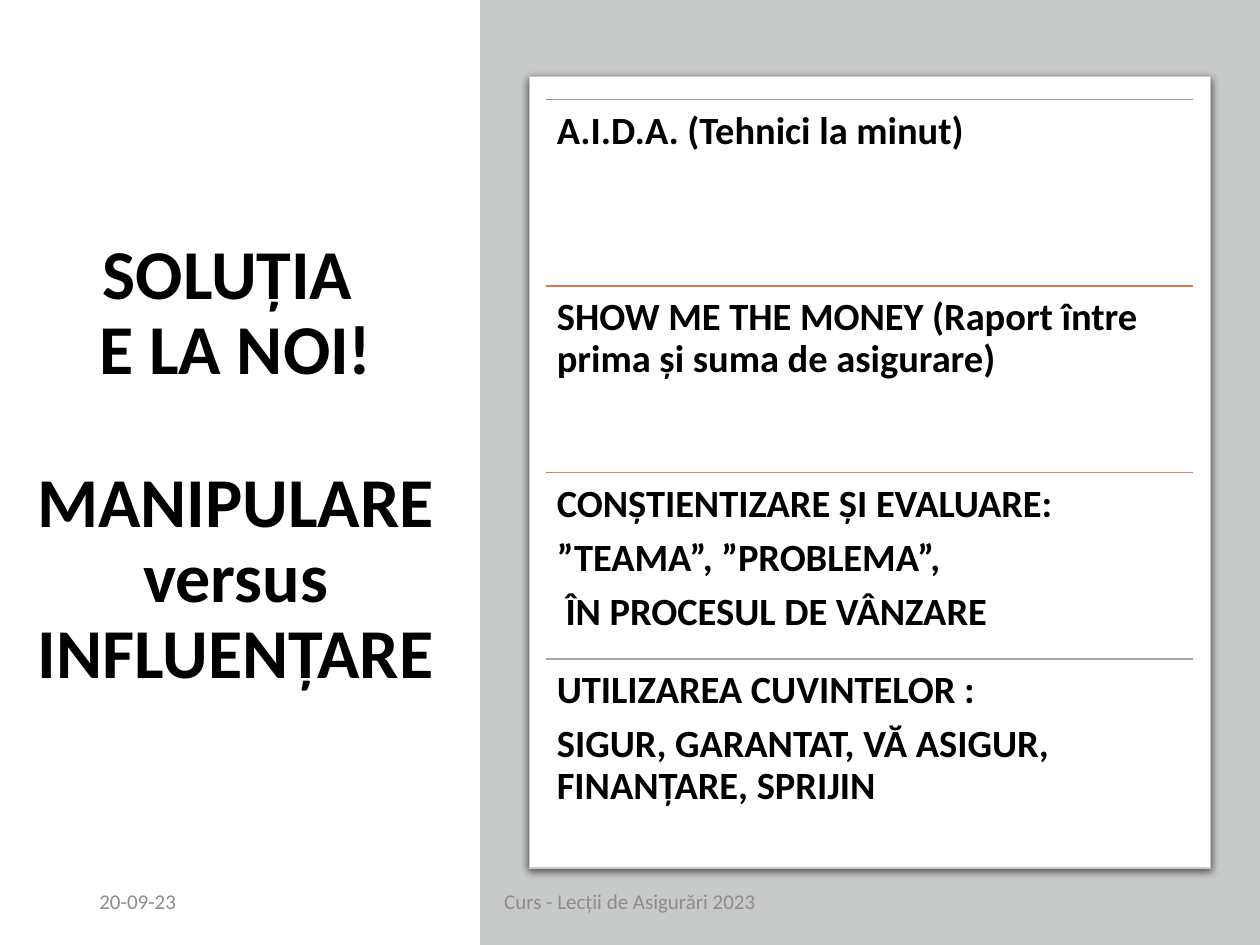
from lxml import etree
from pptx import Presentation
from pptx.dml.color import RGBColor
from pptx.enum.shapes import MSO_CONNECTOR as Connector, MSO_SHAPE as Shape
from pptx.enum.text import MSO_ANCHOR as Anchor, MSO_AUTO_SIZE as AutoSize, PP_ALIGN as Align
from pptx.oxml import parse_xml
from pptx.oxml.ns import nsdecls, qn
from pptx.util import Inches, Pt

FONT = "Calibri"
BLACK = RGBColor(0x00, 0x00, 0x00)
WHITE = RGBColor(0xFF, 0xFF, 0xFF)
PANEL_GRAY = RGBColor(0xC8, 0xCA, 0xCA)
FOOTER_GRAY = RGBColor(0x8C, 0x8C, 0x8C)

TITLE_GROUPS = [
    ["SOLUȚIA ", "E LA NOI!"],
    ["MANIPULARE", "versus", "INFLUENȚARE"],
]
TOPICS = [
    (RGBColor(0xED, 0x7D, 0x31), ["A.I.D.A. (Tehnici la minut)"]),
    (RGBColor(0xD1, 0x7B, 0x5C), ["SHOW ME THE MONEY (Raport între prima și suma de asigurare)"]),
    (RGBColor(0xB9, 0x8A, 0x82), ["CONȘTIENTIZARE ȘI EVALUARE:", "”TEAMA”, ”PROBLEMA”,",
                                  " ÎN PROCESUL DE VÂNZARE"]),
    (RGBColor(0xA5, 0xA5, 0xA5), ["UTILIZAREA CUVINTELOR :",
                                  "SIGUR, GARANTAT, VĂ ASIGUR, FINANȚARE, SPRIJIN"]),
]
CARD_SHADOW = f"""<a:effectLst {nsdecls("a")}>
  <a:outerShdw blurRad="57150" dist="19050" dir="5400000" algn="ctr" rotWithShape="0">
    <a:srgbClr val="000000"><a:alpha val="63000"/></a:srgbClr>
  </a:outerShdw>
</a:effectLst>"""


def add_run(paragraph, text, size, color, bold=False):
    """Add one formatted run to a paragraph."""
    run = paragraph.add_run()
    run.text = text
    run.font.name = FONT
    run.font.size = Pt(size)
    run.font.bold = bold
    run.font.color.rgb = color


def place_title(slide, left, top, width, height):
    """Move the title placeholder and fill it with two groups of lines."""
    title = slide.shapes.title
    title.left, title.top, title.width, title.height = left, top, width, height
    frame = title.text_frame
    frame.word_wrap = True
    frame.auto_size = AutoSize.NONE
    frame.vertical_anchor = Anchor.MIDDLE
    for index, lines in enumerate(TITLE_GROUPS):
        paragraph = frame.add_paragraph() if index else frame.paragraphs[0]
        paragraph.alignment = Align.CENTER
        paragraph.line_spacing = 0.9
        paragraph.space_before = Pt(44 if index else 0)
        for position, line in enumerate(lines):
            if position:
                paragraph.add_line_break()
            add_run(paragraph, line, 40, BLACK, bold=True)


def add_panel(slide, left, top, width, height):
    """Add the gray background panel."""
    panel = slide.shapes.add_shape(Shape.RECTANGLE, left, top, width, height)
    panel.shadow.inherit = False
    panel.fill.solid()
    panel.fill.fore_color.rgb = PANEL_GRAY
    panel.line.fill.background()


def add_card(slide, left, top, width, height):
    """Add the white card with its soft shadow."""
    card = slide.shapes.add_shape(Shape.ROUNDED_RECTANGLE, left, top, width, height)
    card.adjustments[0] = 0
    card.fill.solid()
    card.fill.fore_color.rgb = WHITE
    card.line.color.rgb = PANEL_GRAY
    card.line.width = Pt(0.75)
    card._element.spPr.append(parse_xml(CARD_SHADOW))


def add_topic(slide, left, top, width, height, color, lines):
    """Add one topic: a colored rule with its text below."""
    rule = slide.shapes.add_connector(Connector.STRAIGHT, left, top, left + width, top)
    rule.line.color.rgb = color
    rule.line.width = Pt(1)
    etree.SubElement(rule._element.spPr, qn("a:effectLst"))

    frame = slide.shapes.add_textbox(left, top, width, height).text_frame
    frame.word_wrap = True
    frame.margin_left = frame.margin_right = Inches(0.09)
    frame.margin_top = frame.margin_bottom = Inches(0.09)
    for index, line in enumerate(lines):
        paragraph = frame.add_paragraph() if index else frame.paragraphs[0]
        paragraph.line_spacing = 0.9
        paragraph.space_after = Pt(7.3)
        add_run(paragraph, line, 22, BLACK, bold=True)


def add_topics(slide, left, top, width, height):
    """Stack the topics in equal rows."""
    row_height = height // len(TOPICS)
    for index, (color, lines) in enumerate(TOPICS):
        add_topic(slide, left, top + index * row_height, width, row_height, color, lines)


def add_footer(slide, left, top, width, height, text, alignment):
    """Add one small gray footer text."""
    frame = slide.shapes.add_textbox(left, top, width, height).text_frame
    frame.word_wrap = True
    frame.vertical_anchor = Anchor.MIDDLE
    paragraph = frame.paragraphs[0]
    paragraph.alignment = alignment
    add_run(paragraph, text, 12, FOOTER_GRAY)


def main():
    """Build and save the slide."""
    presentation = Presentation()
    presentation.slide_width = Inches(10)
    presentation.slide_height = Inches(7.5)
    slide = presentation.slides.add_slide(presentation.slide_layouts[5])

    place_title(slide, Inches(0.08), Inches(0.69), Inches(3.58), Inches(6.02))
    add_panel(slide, Inches(3.81), Inches(0), Inches(6.19), Inches(7.5))
    add_card(slide, Inches(4.2), Inches(0.61), Inches(5.41), Inches(6.28))
    add_topics(slide, Inches(4.33), Inches(0.79), Inches(5.14), Inches(5.92))
    add_footer(slide, Inches(0.69), Inches(6.95), Inches(2.25), Inches(0.4),
               "20-09-23", Align.LEFT)
    add_footer(slide, Inches(3.31), Inches(6.95), Inches(3.38), Inches(0.4),
               "Curs - Lecții de Asigurări 2023", Align.CENTER)

    presentation.save("out.pptx")


if __name__ == "__main__":
    main()
